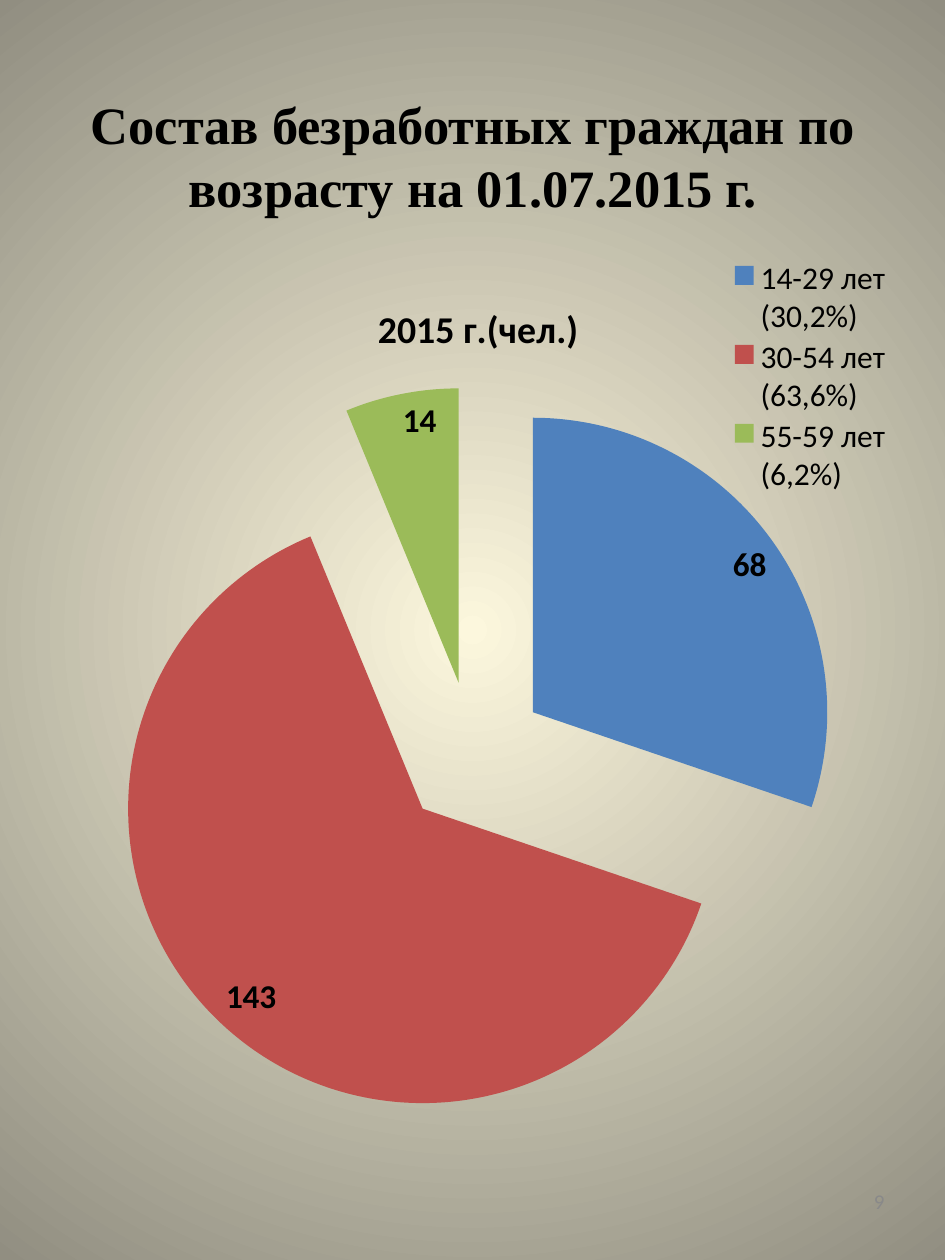
"""Build the slide on unemployed citizens by age group."""
from lxml.etree import SubElement
from pptx import Presentation
from pptx.chart.data import CategoryChartData
from pptx.dml.color import RGBColor
from pptx.enum.chart import XL_CHART_TYPE as ChartType
from pptx.enum.chart import XL_LABEL_POSITION as LabelPosition
from pptx.enum.chart import XL_LEGEND_POSITION as LegendPosition
from pptx.enum.text import MSO_ANCHOR as Anchor
from pptx.enum.text import PP_ALIGN as Align
from pptx.oxml.ns import qn
from pptx.util import Pt

PX = 914400 // 126
COLORS = {"center": "FCF7DD", "edge": "918E81", "text": "000000", "number": "898989"}
HEADING = "Состав безработных граждан по возрасту на 01.07.2015 г."
CHART_TITLE = "2015 г.(чел.)"
PAGE_NUMBER = "9"
AGE_GROUPS = [
    ("14-29 лет (30,2%)", 68, "4F81BD"),
    ("30-54 лет (63,6%)", 143, "C0504D"),
    ("55-59 лет (6,2%)", 14, "9BBB59"),
]
HEADING_BOX = (48, 50, 850, 211)
CHART_BOX = (34, 257, 887, 958)
NUMBER_BOX = (677, 1168, 220, 67)
TITLE_LAYOUT = {"xMode": "edge", "yMode": "edge", "x": 0.38, "y": 0.04}
LEGEND_LAYOUT = {"xMode": "edge", "yMode": "edge", "x": 0.78, "y": 0, "w": 0.19, "h": 0.25}
PLOT_LAYOUT = {"layoutTarget": "inner", "xMode": "edge", "yMode": "edge",
               "x": 0.08, "y": 0.13, "w": 0.83, "h": 0.78}


def emu(box):
    return [length * PX for length in box]


def style(font, size, color, name="Calibri", bold=False):
    font.size, font.name, font.bold = Pt(size), name, bold
    font.color.rgb = RGBColor.from_string(COLORS[color])


def paint_background(slide):
    fill = slide.background.fill
    fill.gradient()
    for stop, color in zip(fill.gradient_stops, ("center", "edge")):
        stop.color.rgb = RGBColor.from_string(COLORS[color])
    stops = slide.background._cSld.find(".//" + qn("a:gsLst"))
    for stop, position in zip(stops, ("0", "100000")):
        stop.set("pos", position)
    gradient = stops.getparent()
    gradient.remove(gradient.find(qn("a:lin")))
    circle = SubElement(gradient, qn("a:path"), path="circle")
    SubElement(circle, qn("a:fillToRect"), dict.fromkeys("ltrb", "50000"))


def add_text(slide, box, text, align, size, color, **font):
    frame = slide.shapes.add_textbox(*emu(box)).text_frame
    frame.word_wrap, frame.vertical_anchor = True, Anchor.MIDDLE
    paragraph = frame.paragraphs[0]
    paragraph.text, paragraph.alignment = text, align
    style(paragraph.font, size, color, **font)


def place(part, settings, before):
    for old in part.findall(qn("c:layout")):
        part.remove(old)
    layout = SubElement(part, qn("c:layout"))
    manual = SubElement(layout, qn("c:manualLayout"))
    for key, value in settings.items():
        SubElement(manual, qn("c:" + key), val=str(value))
    part.find(qn(before)).addprevious(layout)


def add_age_chart(slide):
    names, counts, colors = zip(*AGE_GROUPS)
    data = CategoryChartData()
    data.categories = names
    data.add_series(CHART_TITLE, counts)
    chart = slide.shapes.add_chart(ChartType.PIE, *emu(CHART_BOX), data).chart
    style(chart.font, 18, "text")

    chart.has_title = True
    heading = chart.chart_title.text_frame.paragraphs[0]
    heading.text = CHART_TITLE
    style(heading.font, 21.6, "text", bold=True)
    chart.chart_title.include_in_layout = False
    place(chart.chart_title._element, TITLE_LAYOUT, "c:overlay")

    chart.has_legend = True
    chart.legend.position = LegendPosition.CORNER
    chart.legend.include_in_layout = True
    style(chart.legend.font, 18, "text")
    place(chart.legend._element, LEGEND_LAYOUT, "c:overlay")

    plot = chart.plots[0]
    plot.vary_by_categories = True
    place(plot._element.getparent(), PLOT_LAYOUT, "c:pieChart")
    series = plot.series[0]
    for index, color in enumerate(colors):
        fill = series.points[index].format.fill
        fill.solid()
        fill.fore_color.rgb = RGBColor.from_string(color)
    explosion = SubElement(series._element, qn("c:explosion"), val="25")
    series._element.find(qn("c:dPt")).addprevious(explosion)

    labels = series.data_labels
    labels.show_value, labels.position = True, LabelPosition.INSIDE_END
    style(labels.font, 19, "text", bold=True)


def main():
    deck = Presentation()
    deck.slide_width, deck.slide_height = emu((945, 1260))
    slide = deck.slides.add_slide(deck.slide_layouts[6])
    paint_background(slide)
    add_text(slide, HEADING_BOX, HEADING, Align.CENTER, 30, "text",
             name="Times New Roman", bold=True)
    add_age_chart(slide)
    add_text(slide, NUMBER_BOX, PAGE_NUMBER, Align.RIGHT, 12, "number")
    deck.save("out.pptx")


if __name__ == "__main__":
    main()
